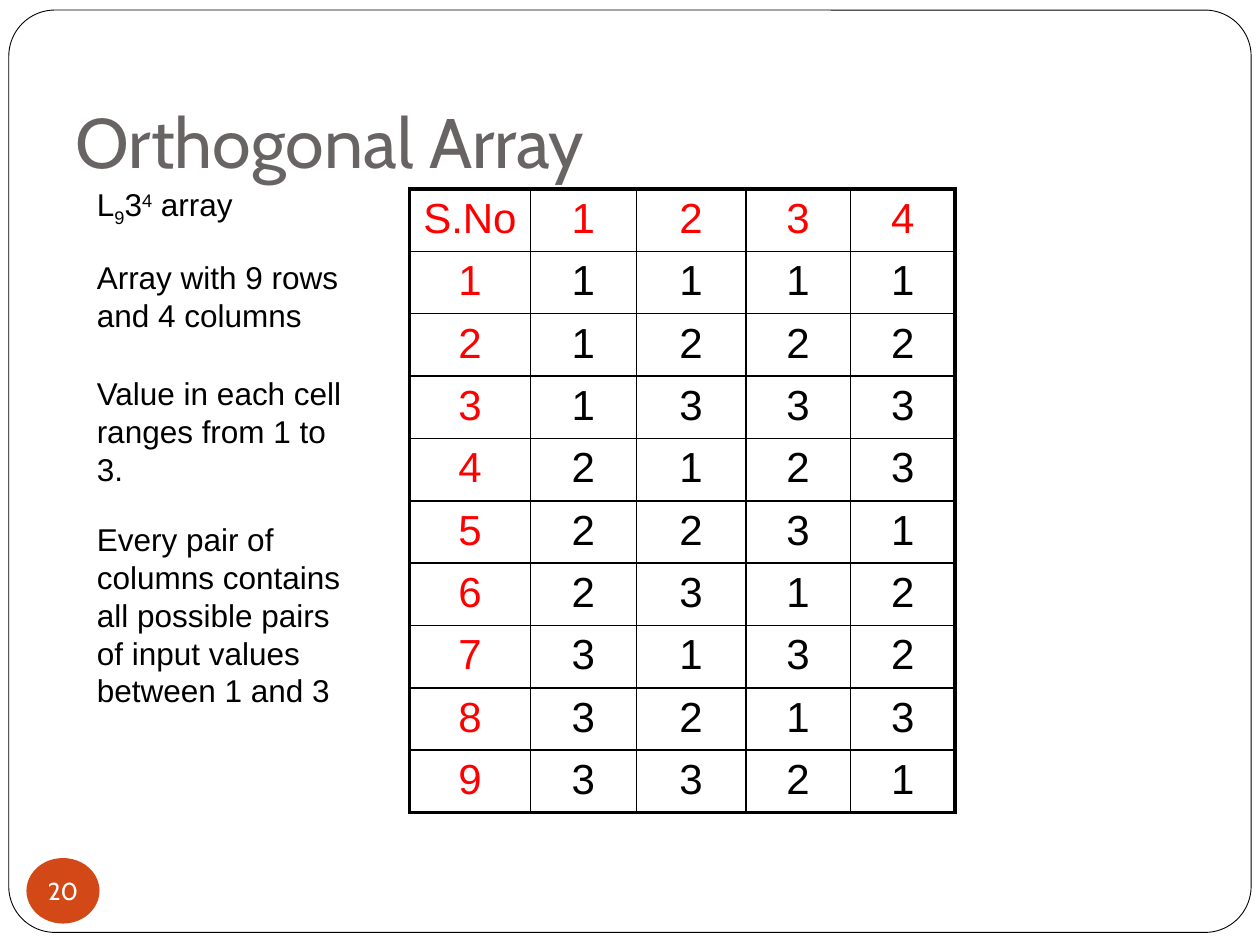
"""Build the orthogonal array slide: notes on the left, the L9 array as a table."""
from lxml import etree
from pptx import Presentation
from pptx.dml.color import RGBColor
from pptx.enum import shapes, text
from pptx.oxml.ns import qn
from pptx.util import Inches, Pt

COLORS = {"ink": "000000", "paper": "FFFFFF", "label": "FF0000",
          "title": "696464", "badge": "D34817"}
TITLE = "Orthogonal Array"
PAGE_NUMBER = "20"
NOTES = [
    (1.42, 2.08, 0.4, [("L", 0), ("9", -25), ("3", 0), ("4", 30), (" array", 0)]),
    (2, 2.33, 0.7, [("Array with 9 rows and 4 columns", 0)]),
    (2.92, 2.17, 1, [("Value in each cell ranges from 1 to 3.", 0)]),
    (4.08, 2.25, 1.6, [("Every pair of columns contains all possible pairs "
                        "of input values between 1 and 3", 0)]),
]
HEADER = ["S.No", "1", "2", "3", "4"]
ARRAY = ["1111", "1222", "1333", "2123", "2231", "2312", "3132", "3213", "3321"]
COLUMN_WIDTHS = [0.96, 0.84, 0.87, 0.83, 0.83]
TABLE_LEFT, TABLE_TOP, TABLE_HEIGHT = 3.25, 1.5, 4.95
THIN, THICK = 1, 2.25


def color(name):
    return RGBColor.from_string(COLORS[name])


def style(para, font, size, ink, align=text.PP_ALIGN.LEFT):
    para.alignment = align
    para.font.name, para.font.size, para.font.bold = font, Pt(size), False
    para.font.color.rgb = color(ink)


def add_shape(page, kind, area, fill):
    shape = page.shapes.add_shape(kind, *map(Inches, area))
    shape.shadow.inherit = False
    shape.fill.solid()
    shape.fill.fore_color.rgb = color(fill)
    return shape


def add_frame(page):
    frame = add_shape(page, shapes.MSO_SHAPE.ROUNDED_RECTANGLE,
                      (0.07, 0.08, 9.86, 7.32), "paper")
    frame.adjustments[0] = 0.05
    frame.line.color.rgb = color("ink")
    frame.line.width = Pt(0.5)
    page.shapes._spTree.insert(2, frame._element)


def add_title(page):
    title = page.shapes.title
    title.left, title.top, title.width, title.height = map(Inches, (0.5, 0.3, 9, 1.25))
    frame = title.text_frame
    frame.text = TITLE
    frame.auto_size = text.MSO_AUTO_SIZE.NONE
    frame.vertical_anchor = text.MSO_ANCHOR.BOTTOM
    frame.margin_bottom = Inches(0.1)
    style(frame.paragraphs[0], "Cabin", 40, "title")


def add_note(page, top, width, height, spans):
    box = page.shapes.add_textbox(*map(Inches, (0.67, top, width, height)))
    box.text_frame.word_wrap = True
    box.text_frame.auto_size = text.MSO_AUTO_SIZE.SHAPE_TO_FIT_TEXT
    para = box.text_frame.paragraphs[0]
    style(para, "Arial", 18, "ink")
    for words, baseline in spans:
        span = para.add_run()
        span.text = words
        if baseline:
            span.font._element.set("baseline", str(baseline * 1000))


def set_borders(cell, widths):
    properties = cell._tc.get_or_add_tcPr()
    for side, width in widths.items():
        line = etree.SubElement(properties, qn(f"a:ln{side}"), w=str(Pt(width)))
        fill = etree.SubElement(line, qn("a:solidFill"))
        etree.SubElement(fill, qn("a:srgbClr"), val=COLORS["ink"])


def add_array(page):
    rows = [HEADER] + [[str(number), *values] for number, values in enumerate(ARRAY, 1)]
    last_row, last_column = len(rows) - 1, len(HEADER) - 1
    table = page.shapes.add_table(
        len(rows), len(HEADER), Inches(TABLE_LEFT), Inches(TABLE_TOP),
        Inches(sum(COLUMN_WIDTHS)), Inches(TABLE_HEIGHT)).table
    table.first_row = table.horz_banding = False
    for column, width in zip(table.columns, COLUMN_WIDTHS):
        column.width = Inches(width)
    for r, values in enumerate(rows):
        for c, value in enumerate(values):
            cell = table.cell(r, c)
            cell.text = value
            style(cell.text_frame.paragraphs[0], "Arial", 24,
                  "ink" if r and c else "label", text.PP_ALIGN.CENTER)
            outer = {"L": c == 0, "R": c == last_column, "T": r == 0, "B": r == last_row}
            set_borders(cell, {side: THICK if edge else THIN
                               for side, edge in outer.items()})
            cell.fill.background()


def add_badge(page):
    badge = add_shape(page, shapes.MSO_SHAPE.OVAL, (0.21, 6.81, 0.58, 0.52), "badge")
    badge.line.fill.background()
    frame = badge.text_frame
    frame.margin_left = frame.margin_right = frame.margin_top = frame.margin_bottom = 0
    frame.word_wrap = False
    frame.vertical_anchor = text.MSO_ANCHOR.MIDDLE
    frame.text = PAGE_NUMBER
    style(frame.paragraphs[0], "Cabin", 14, "paper", text.PP_ALIGN.CENTER)


def main():
    deck = Presentation()
    deck.slide_width, deck.slide_height = Inches(10), Inches(7.5)
    page = deck.slides.add_slide(deck.slide_layouts[5])
    add_frame(page)
    add_title(page)
    add_array(page)
    for note in NOTES:
        add_note(page, *note)
    add_badge(page)
    deck.save("out.pptx")


if __name__ == "__main__":
    main()
